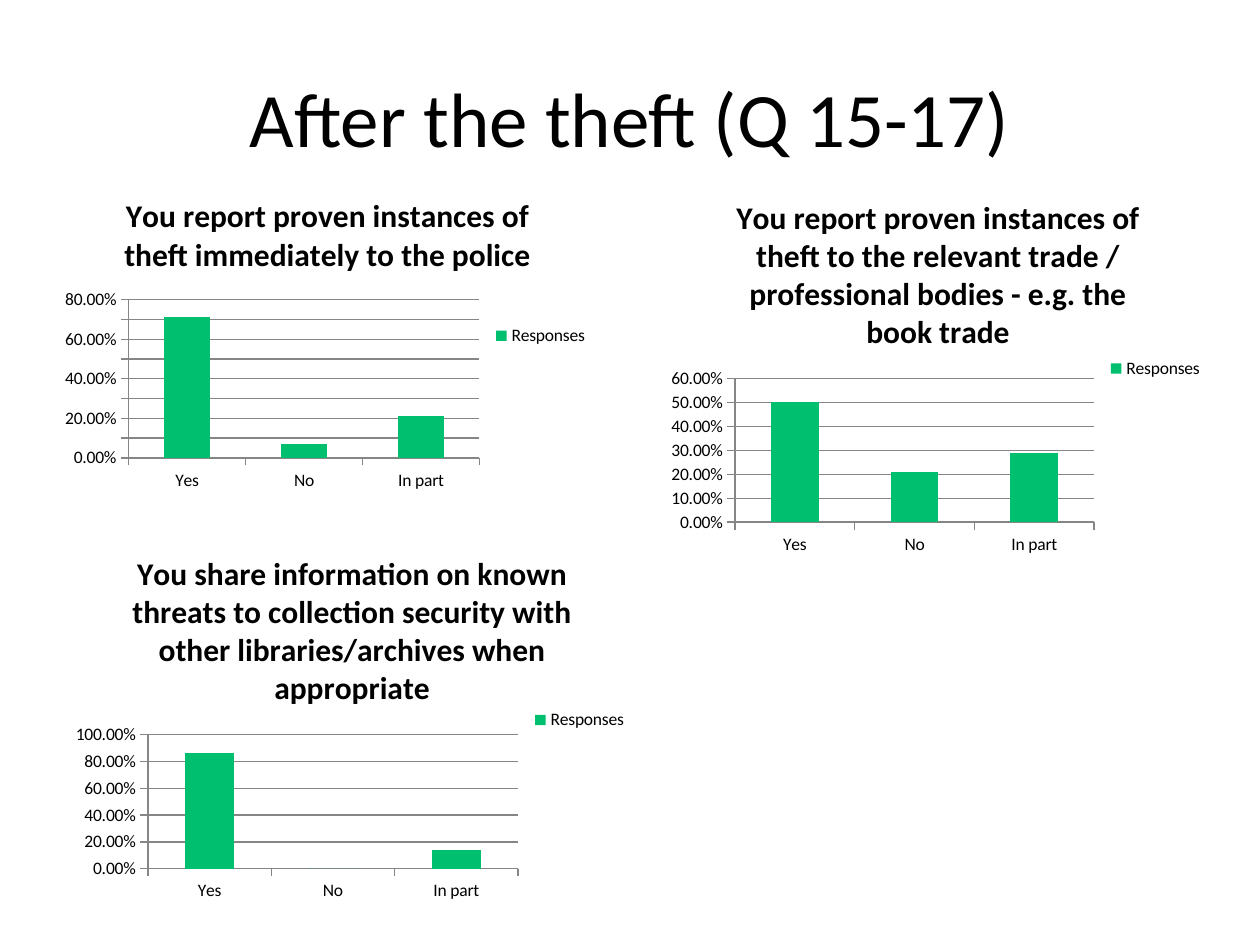
from pptx import Presentation
from pptx import util as u
from pptx.chart.data import CategoryChartData
from pptx.dml.color import RGBColor
from pptx.enum import chart as ch, text

COLOURS = {"ink": "000000", "bar": "00BF6F", "grid": "868686", "paper": "FFFFFF"}
COLUMNS, ROWS = 100, 75
ANSWERS = ("Yes", "No", "In part")

# Place on the grid (left, top, width, height), question, share of each answer
QUESTIONS = [
    ((4.3, 13.9, 43.4, 25.5),
     "You report proven instances of theft immediately to the police",
     (0.71, 0.07, 0.21)),
    ((52.4, 13.9, 44.1, 30.7),
     "You report proven instances of theft to the relevant trade / "
     "professional bodies - e.g. the book trade",
     (0.5, 0.21, 0.29)),
    ((5.1, 42.2, 45.7, 29.9),
     "You share information on known threats to collection security with "
     "other libraries/archives when appropriate",
     (0.86, 0, 0.14)),
]


class SurveySlide:
    font = "Calibri"
    title_size, question_size, label_size = 44, 18, 10

    def __init__(self, deck):
        self.deck = deck
        self.slide = deck.slides.add_slide(deck.slide_layouts[6])
        fill = self.slide.background.fill
        fill.solid()
        fill.fore_color.rgb = self.colour("paper")

    def colour(self, name):
        return RGBColor.from_string(COLOURS[name])

    def place(self, left, top, width, height):
        """Turn grid columns and rows into slide lengths."""
        column = self.deck.slide_width / COLUMNS
        row = self.deck.slide_height / ROWS
        return (u.Emu(round(left * column)), u.Emu(round(top * row)),
                u.Emu(round(width * column)), u.Emu(round(height * row)))

    def style(self, font, size, bold=False):
        font.name = self.font
        font.size = u.Pt(size)
        font.bold = bold
        font.color.rgb = self.colour("ink")

    def add_words(self, frame, words, size, bold=False):
        para = frame.paragraphs[0]
        para.alignment = text.PP_ALIGN.CENTER
        span = para.add_run()
        span.text = words
        self.style(span.font, size, bold)

    def title(self, grid, words):
        frame = self.slide.shapes.add_textbox(*self.place(*grid)).text_frame
        frame.word_wrap = True
        frame.vertical_anchor = text.MSO_ANCHOR.MIDDLE
        self.add_words(frame, words, self.title_size)

    def line(self, line_format):
        line_format.color.rgb = self.colour("grid")
        line_format.width = u.Pt(0.75)

    def bar_chart(self, grid, question, shares):
        data = CategoryChartData(number_format="0.00%")
        data.categories = ANSWERS
        data.add_series("Responses", shares)
        chart = self.slide.shapes.add_chart(
            ch.XL_CHART_TYPE.COLUMN_CLUSTERED, *self.place(*grid), data).chart
        self.style(chart.font, self.label_size)

        chart.has_title = True
        self.add_words(chart.chart_title.text_frame, question,
                       self.question_size, True)
        chart.chart_title.include_in_layout = False
        chart.has_legend = True
        chart.legend.position = ch.XL_LEGEND_POSITION.RIGHT
        chart.legend.include_in_layout = False

        plot = chart.plots[0]
        plot.gap_width = 150
        plot.vary_by_categories = False
        fill = plot.series[0].format.fill
        fill.solid()
        fill.fore_color.rgb = self.colour("bar")

        for axis in (chart.category_axis, chart.value_axis):
            axis.major_tick_mark = ch.XL_TICK_MARK.OUTSIDE
            axis.minor_tick_mark = ch.XL_TICK_MARK.NONE
            self.line(axis.format.line)
        chart.value_axis.has_major_gridlines = True
        self.line(chart.value_axis.major_gridlines.format.line)
        chart.value_axis.tick_labels.number_format = "0.00%"
        chart.value_axis.tick_labels.number_format_is_linked = False


def main():
    deck = Presentation()
    deck.slide_width, deck.slide_height = u.Inches(10), u.Inches(7.5)
    page = SurveySlide(deck)
    page.title((5, 3, 90, 12.5), "After the theft (Q 15-17)")
    for grid, question, shares in QUESTIONS:
        page.bar_chart(grid, question, shares)
    deck.save("out.pptx")


if __name__ == "__main__":
    main()
